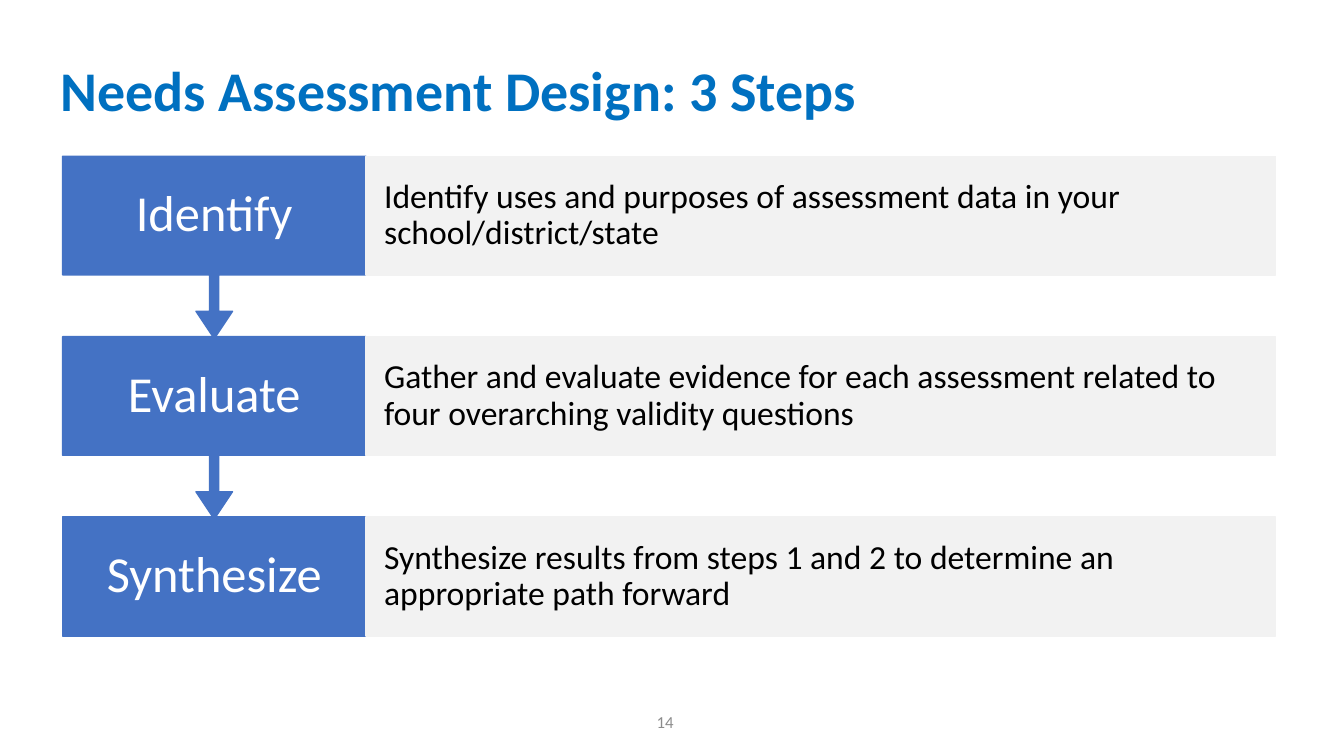
from pptx import Presentation
from pptx.dml.color import RGBColor
from pptx.enum.shapes import MSO_SHAPE as Kind
from pptx.enum.text import MSO_ANCHOR as Anchor, MSO_AUTO_SIZE as Auto, PP_ALIGN as Align
from pptx.util import Pt

UNIT = 9144
BLUE, GRAY = "4472C4", "F2F2F2"
STEPS = [
    ("Identify", "Identify uses and purposes of assessment data in your school/district/state"),
    ("Evaluate", "Gather and evaluate evidence for each assessment related to four overarching validity questions"),
    ("Synthesize", "Synthesize results from steps 1 and 2 to determine an appropriate path forward"),
]


def px(n):
    return n * UNIT


def color(code):
    return RGBColor.from_string(code)


def write(shape, text, size=24, ink="000000", bold=False, align=Align.LEFT, side=10, line=0.9):
    frame = shape.text_frame
    frame.word_wrap = True
    frame.auto_size = Auto.NONE
    frame.vertical_anchor = Anchor.MIDDLE
    frame.margin_left = frame.margin_right = px(side)
    frame.margin_top = frame.margin_bottom = 0
    para = frame.paragraphs[0]
    para.alignment = align
    para.line_spacing = line
    run = para.add_run()
    run.text = text
    font = run.font
    font.name, font.size, font.bold = "Calibri", Pt(size), bold
    font.color.rgb = color(ink)


def block(slide, kind, box, fill):
    shape = slide.shapes.add_shape(kind, *map(px, box))
    shape.shadow.inherit = False
    shape.fill.solid()
    shape.fill.fore_color.rgb = color(fill)
    shape.line.color.rgb = color(fill)
    shape.line.width = Pt(1)
    return shape


def title(slide, box, text):
    head = slide.shapes.title
    head.left, head.top, head.width, head.height = map(px, box)
    write(head, text, size=40, ink="0070C0", bold=True)


def step(slide, box, name, text, last):
    left, top, width, high = box
    split = 301
    if last:
        label = block(slide, Kind.RECTANGLE, (left, top, split, high), BLUE)
    else:
        label = block(slide, Kind.DOWN_ARROW_CALLOUT, (left, top, split, 181), BLUE)
        for i, part in enumerate((0.05, 0.1, 0.15, 0.65)):
            label.adjustments[i] = part
    write(label, name, size=36, ink="FFFFFF", align=Align.CENTER, side=21)
    panel = block(slide, Kind.RECTANGLE, (left + split, top, width - split, high), GRAY)
    write(panel, text, side=18)


def steps(slide, box):
    left, top, width, high = box
    pitch = 179
    end = len(STEPS) - 1
    for i in range(end, -1, -1):
        step(slide, (left, top + i * pitch, width, high), *STEPS[i], last=i == end)


def page(slide, box, text):
    note = slide.shapes.add_textbox(*map(px, box))
    write(note, text, size=12, ink="8C8C8C", align=Align.RIGHT, line=1.0)


def main():
    deck = Presentation()
    deck.slide_width, deck.slide_height = px(1333), px(750)
    slide = deck.slides.add_slide(deck.slide_layouts[5])
    title(slide, (50, 30, 1100, 125), "Needs Assessment Design: 3 Steps")
    steps(slide, (62, 155, 1203, 118))
    page(slide, (378, 696, 300, 40), "14")
    deck.save("out.pptx")


if __name__ == "__main__":
    main()
